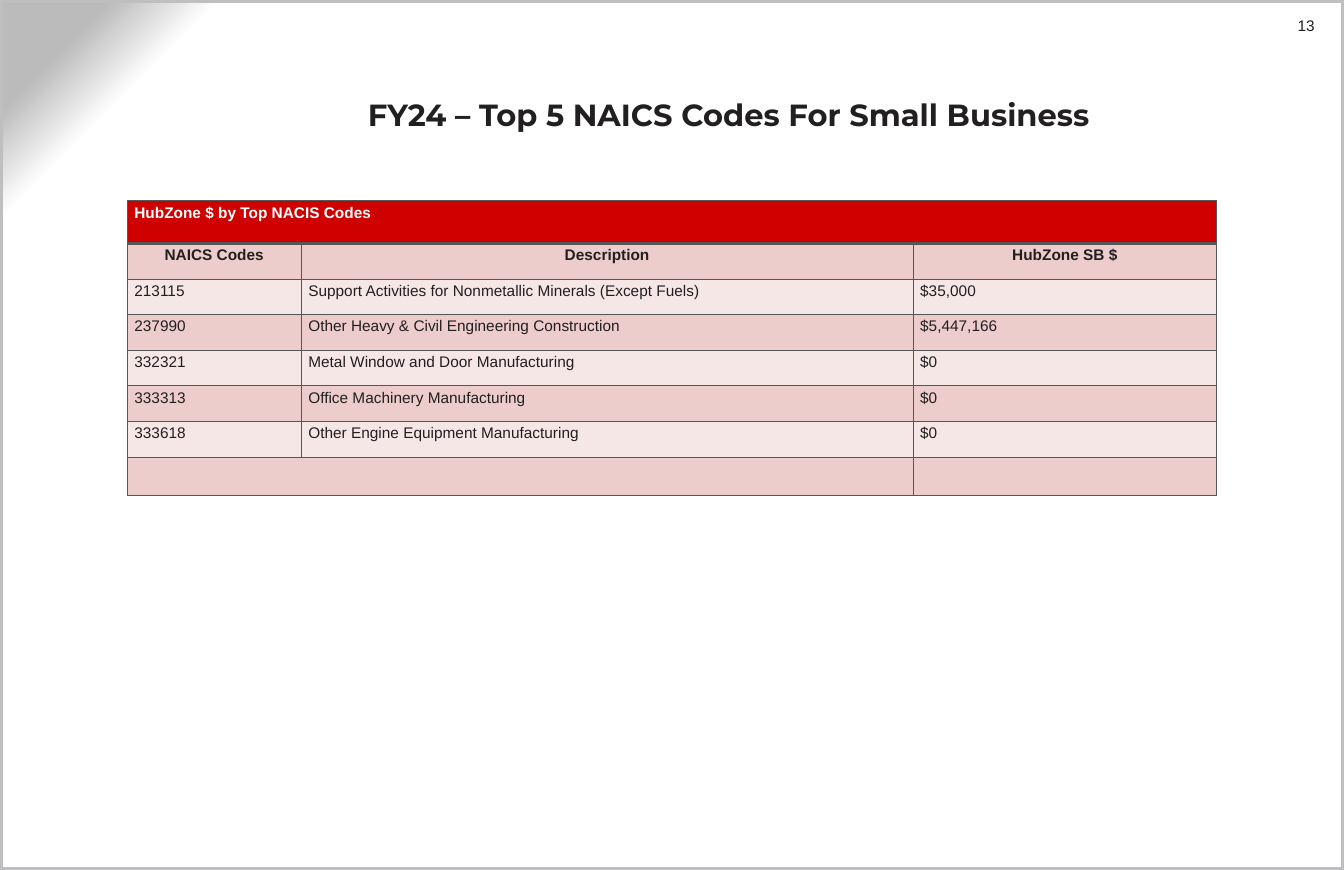
from dataclasses import dataclass

from lxml.etree import SubElement
from pptx import Presentation
from pptx.dml.color import RGBColor
from pptx.enum.shapes import MSO_SHAPE
from pptx.enum.text import MSO_ANCHOR, PP_ALIGN
from pptx.oxml import parse_xml
from pptx.oxml.ns import nsdecls, qn
from pptx.util import Inches, Pt


@dataclass(frozen=True)
class Theme:
    ink: str = "221F20"
    white: str = "FFFFFF"
    corner: str = "BBBBBC"
    frame: str = "BFBFC2"
    banner: str = "CF0000"
    bands: tuple = ("EDCCCC", "F6E7E7")
    border: str = "565557"
    body_font: str = "Arial"
    title_font: str = "Montserrat"
    body_size: float = 14
    title_size: float = 27.8
    frame_width: float = 6
    thin: float = 1
    thick: float = 3


THEME = Theme()
WIDTH, HEIGHT = 17, 11
COLUMN_WIDTHS = (2.2, 7.74, 3.84)
ROW_HEIGHTS = (0.54, *[0.45] * 6, 0.49)
ROWS = (
    ("HubZone $ by Top NACIS Codes", "", ""),
    ("NAICS Codes", "Description", "HubZone SB $"),
    ("213115", "Support Activities for Nonmetallic Minerals (Except Fuels)", "$35,000"),
    ("237990", "Other Heavy & Civil Engineering Construction", "$5,447,166"),
    ("332321", "Metal Window and Door Manufacturing", "$0"),
    ("333313", "Office Machinery Manufacturing", "$0"),
    ("333618", "Other Engine Equipment Manufacturing", "$0"),
    ("", "", ""),
)


def set_attributes(target, values):
    for name, value in values.items():
        setattr(target, name, value)


def set_margins(target, left, top, right, bottom):
    set_attributes(target, {
        "margin_left": Inches(left), "margin_top": Inches(top),
        "margin_right": Inches(right), "margin_bottom": Inches(bottom),
    })


def write_text(text_frame, text, alignment=PP_ALIGN.LEFT, color=THEME.ink,
               size=THEME.body_size, font=THEME.body_font, bold=False):
    paragraph = text_frame.paragraphs[0]
    paragraph.alignment = alignment
    run = paragraph.add_run()
    run.text = text
    set_attributes(run.font, {"name": font, "size": Pt(size), "bold": bold})
    run.font.color.rgb = RGBColor.from_string(color)


def shade_background(slide):
    """Fade from white to grey towards the top left corner."""
    fill = slide.background.fill
    fill.gradient()
    old_gradient = slide.background._cSld.find(".//" + qn("a:gradFill"))
    stops = ((85, THEME.white, 100), (90, THEME.white, 35), (95, THEME.corner, 100))
    stop_xml = "".join(
        f'<a:gs pos="{position * 1000}"><a:srgbClr val="{color}">'
        f'<a:alpha val="{opacity * 1000}"/></a:srgbClr></a:gs>'
        for position, color, opacity in stops
    )
    gradient = parse_xml(
        f'<a:gradFill {nsdecls("a")} rotWithShape="1"><a:gsLst>{stop_xml}</a:gsLst>'
        '<a:path path="circle"><a:fillToRect l="100000" t="100000"/></a:path>'
        '<a:tileRect r="-100000" b="-100000"/></a:gradFill>'
    )
    old_gradient.getparent().replace(old_gradient, gradient)


def add_frame(slide):
    frame = slide.shapes.add_shape(
        MSO_SHAPE.RECTANGLE, 0, 0, Inches(WIDTH), Inches(HEIGHT))
    frame.shadow.inherit = False
    frame.fill.background()
    frame.line.color.rgb = RGBColor.from_string(THEME.frame)
    frame.line.width = Pt(THEME.frame_width)


def add_page_number(slide, number):
    box = slide.shapes.add_textbox(
        Inches(15.86), Inches(0.21), Inches(0.77), Inches(0.24))
    box.text_frame.word_wrap = True
    set_margins(box.text_frame, 0.1, 0, 0, 0)
    write_text(box.text_frame, number, PP_ALIGN.RIGHT)


def format_title(slide, text):
    title = slide.shapes.title
    set_attributes(title, {
        "left": Inches(2.42), "top": Inches(0.88),
        "width": Inches(13.55), "height": Inches(1.12),
    })
    title.text_frame.vertical_anchor = MSO_ANCHOR.MIDDLE
    set_margins(title.text_frame, 0.05, 0, 0, 0)
    write_text(title.text_frame, text, PP_ALIGN.CENTER,
               size=THEME.title_size, font=THEME.title_font, bold=True)


def add_borders(cell, top, bottom):
    properties = cell._tc.get_or_add_tcPr()
    widths = {"L": THEME.thin, "R": THEME.thin, "T": top, "B": bottom}
    for side, width in widths.items():
        line = SubElement(properties, qn(f"a:ln{side}"), w=str(Pt(width)))
        fill = SubElement(line, qn("a:solidFill"))
        SubElement(fill, qn("a:srgbClr"), val=THEME.border)


def format_cell(cell, row, text):
    is_banner, is_heading = row == 0, row == 1
    set_margins(cell, 0.09, 0.04, 0.09, 0.04)
    add_borders(cell, THEME.thick if is_heading else THEME.thin,
                THEME.thick if is_banner else THEME.thin)
    cell.fill.solid()
    color = THEME.banner if is_banner else THEME.bands[(row - 1) % 2]
    cell.fill.fore_color.rgb = RGBColor.from_string(color)
    if text:
        write_text(cell.text_frame, text,
                   PP_ALIGN.CENTER if is_heading else PP_ALIGN.LEFT,
                   THEME.white if is_banner else THEME.ink,
                   bold=is_banner or is_heading)


def add_code_table(slide):
    table = slide.shapes.add_table(
        len(ROWS), len(COLUMN_WIDTHS), Inches(1.61), Inches(2.54),
        Inches(sum(COLUMN_WIDTHS)), Inches(sum(ROW_HEIGHTS))).table
    set_attributes(table, {"first_row": False, "horz_banding": False})
    for column, width in zip(table.columns, COLUMN_WIDTHS):
        column.width = Inches(width)
    for index, (row, height) in enumerate(zip(table.rows, ROW_HEIGHTS)):
        row.height = Inches(height)
        for cell, text in zip(row.cells, ROWS[index]):
            format_cell(cell, index, text)
    last = len(ROWS) - 1
    table.cell(0, 0).merge(table.cell(0, 2))
    table.cell(last, 0).merge(table.cell(last, 1))


def main():
    presentation = Presentation()
    set_attributes(presentation, {
        "slide_width": Inches(WIDTH), "slide_height": Inches(HEIGHT)})
    slide = presentation.slides.add_slide(
        presentation.slide_layouts.get_by_name("Title Only"))
    shade_background(slide)
    add_page_number(slide, "13")
    add_frame(slide)
    format_title(slide, "FY24 – Top 5 NAICS Codes For Small Business")
    add_code_table(slide)
    presentation.save("out.pptx")


if __name__ == "__main__":
    main()
